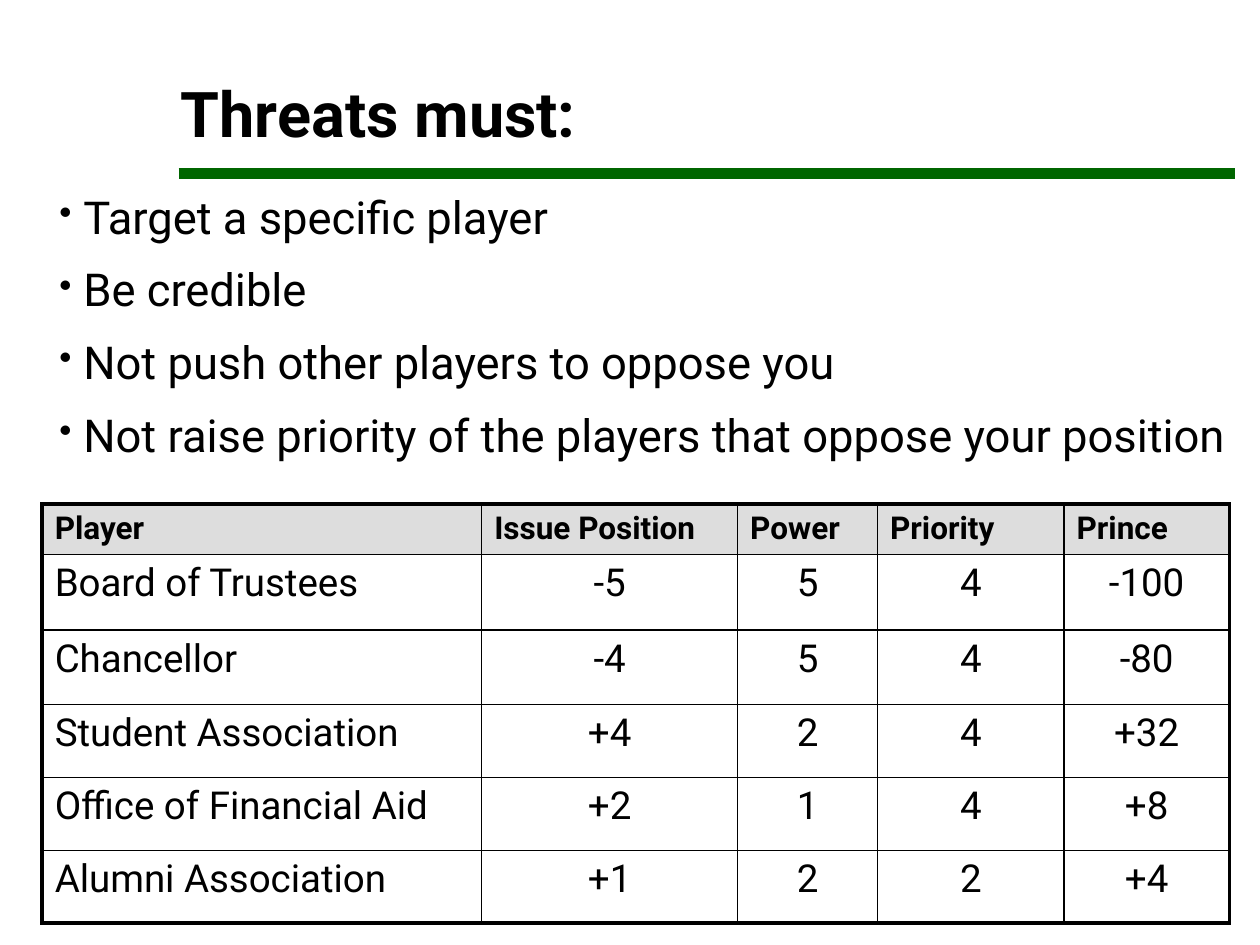
from pptx import Presentation
from pptx.dml.color import RGBColor
from pptx.enum.shapes import MSO_CONNECTOR
from pptx.enum.text import MSO_ANCHOR, MSO_AUTO_SIZE, PP_ALIGN
from pptx.oxml.ns import qn
from pptx.util import Cm, Pt
from lxml.etree import SubElement

STRAIGHT = MSO_CONNECTOR.STRAIGHT
BOTTOM = MSO_ANCHOR.BOTTOM
FIXED = MSO_AUTO_SIZE.NONE
LEFT, CENTER = PP_ALIGN.LEFT, PP_ALIGN.CENTER
COLORS = {"ink": "000000", "rule": "006600", "head": "DDDDDD"}

POINTS = [
    "Target a specific player",
    "Be credible",
    "Not push other players to oppose you",
    "Not raise priority of the players that oppose your position",
]
PLAYERS = [
    ("Player", "Issue Position", "Power", "Priority", "Prince"),
    ("Board of Trustees", "-5", "5", "4", "-100"),
    ("Chancellor", "-4", "5", "4", "-80"),
    ("Student Association", "+4", "2", "4", "+32"),
    ("Office of Financial Aid", "+2", "1", "4", "+8"),
    ("Alumni Association", "+1", "2", "2", "+4"),
]
WIDTHS = [8.86, 5.16, 2.82, 3.76, 3.33]
HEIGHTS = [1.02, 1.52, 1.5, 1.47, 1.47, 1.47]


class Deck:
    """Holds the style and the current slide, and draws each kind of element."""

    def __init__(self):
        self.font = "Roboto"
        self.prs = Presentation()
        self.prs.slide_width, self.prs.slide_height = Cm(25.4), Cm(19.05)
        self.slide = self.prs.slides.add_slide(self.prs.slide_layouts[5])

    def color(self, name):
        return RGBColor.from_string(COLORS[name])

    def style(self, para, size, bold=False, align=LEFT):
        para.alignment = align
        for run in para.runs:
            run.font.name, run.font.size, run.font.bold = self.font, Pt(size), bold
            run.font.color.rgb = self.color("ink")

    def title(self, text, left, top, width, height):
        shape = self.slide.shapes.title
        shape.left, shape.top = Cm(left), Cm(top)
        shape.width, shape.height = Cm(width), Cm(height)
        frame = shape.text_frame
        frame.text = text
        frame.auto_size, frame.vertical_anchor = FIXED, BOTTOM
        para = frame.paragraphs[0]
        para.line_spacing = 0.9
        self.style(para, 36, bold=True)

    def rule(self, left, right, top, weight):
        line = self.slide.shapes.add_connector(
            STRAIGHT, Cm(left), Cm(top), Cm(right), Cm(top))
        line.line.color.rgb = self.color("rule")
        line.line.width = Pt(weight)
        SubElement(line._element.spPr, qn("a:effectLst"))

    def bullets(self, items, left, top, width, height):
        box = self.slide.shapes.add_textbox(Cm(left), Cm(top), Cm(width), Cm(height))
        frame = box.text_frame
        frame.word_wrap = True
        frame.text = "\n".join(items)
        for index, para in enumerate(frame.paragraphs):
            para.line_spacing = 0.9
            para.space_before = Pt(13.5 if index else 0)
            props = para._p.get_or_add_pPr()
            props.set("marL", str(Cm(0.58)))
            props.set("indent", str(Cm(-0.48)))
            tint = SubElement(props, qn("a:buClr"))
            SubElement(tint, qn("a:srgbClr"), val=COLORS["ink"])
            SubElement(props, qn("a:buSzPct"), val="80000")
            SubElement(props, qn("a:buChar"), char="•")
            self.style(para, 25.9)

    def border(self, cell, side, weight):
        props = cell._tc.get_or_add_tcPr()
        line = SubElement(props, qn(f"a:ln{side}"), w=str(Pt(weight)))
        fill = SubElement(line, qn("a:solidFill"))
        SubElement(fill, qn("a:srgbClr"), val=COLORS["ink"])

    def table(self, data, left, top, widths, heights):
        rows, cols = len(heights), len(widths)
        table = self.slide.shapes.add_table(
            rows, cols, Cm(left), Cm(top), Cm(sum(widths)), Cm(sum(heights))).table
        for col, width in zip(table.columns, widths):
            col.width = Cm(width)
        for row, height in zip(table.rows, heights):
            row.height = Cm(height)
        for r, values in enumerate(data):
            for c, value in enumerate(values):
                cell = table.cell(r, c)
                cell.text = value
                outer = {"L": c == 0, "R": c == cols - 1,
                         "T": r == 0, "B": r == rows - 1}
                for side, edge in outer.items():
                    self.border(cell, side, 2.25 if edge else 1)
                head = r == 0
                if head:
                    cell.fill.solid()
                    cell.fill.fore_color.rgb = self.color("head")
                else:
                    cell.fill.background()
                self.style(cell.text_frame.paragraphs[0], 18 if head else 22,
                           head, LEFT if head or c == 0 else CENTER)

    def save(self):
        self.prs.save("out.pptx")


def main():
    deck = Deck()
    deck.rule(3.6, 24.9, 3.5, 6)
    deck.title("Threats must:", 3.39, 1.48, 22.01, 1.69)
    deck.bullets(POINTS, 0.85, 3.81, 24.13, 6.35)
    deck.table(PLAYERS, 0.85, 10.16, WIDTHS, HEIGHTS)
    deck.save()


if __name__ == "__main__":
    main()
